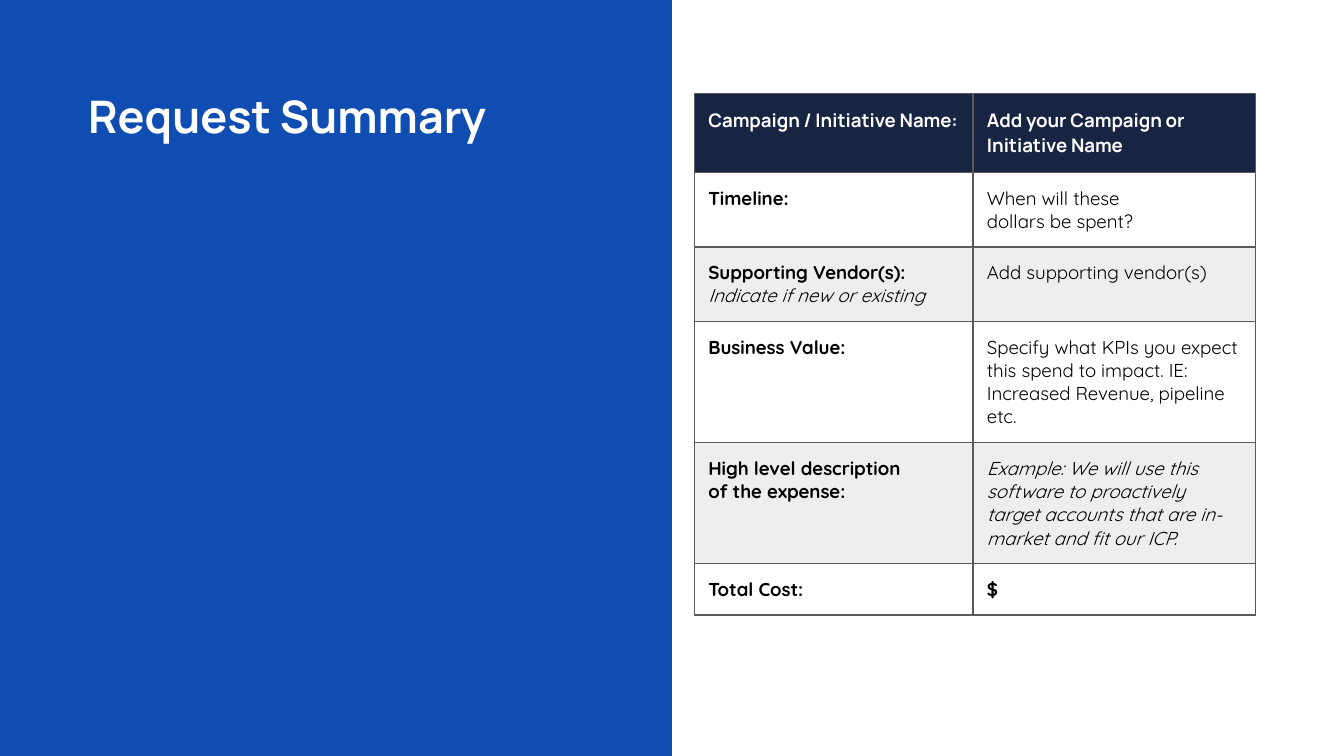
from copy import deepcopy
from dataclasses import dataclass

from lxml.etree import SubElement
from pptx import Presentation
from pptx.dml.color import RGBColor
from pptx.enum.shapes import MSO_SHAPE
from pptx.enum.text import MSO_ANCHOR, MSO_AUTO_SIZE, PP_ALIGN
from pptx.oxml.ns import qn
from pptx.util import Pt

PX = 9525  # 96 px to the inch
SLIDE_SIZE = (960, 540)
PANEL_BOX = (0, 0, 480, 540)
TITLE_BOX = (63, 63, 368, 48)
TABLE_LEFT, TABLE_TOP = 496, 67
COLUMN_WIDTHS = (199, 202)
ROW_HEIGHTS = (32, 32, 45, 45, 45, 32)
CELL_PADDING = 10


@dataclass(frozen=True)
class Theme:
    panel: str = "104DB3"
    header: str = "172543"
    band: str = "EEEEEE"
    paper: str = "FFFFFF"
    ink: str = "000000"
    rule: str = "595959"
    heading_font: str = "Manrope"
    body_font: str = "Quicksand"
    title_size: int = 24
    cell_size: int = 10
    rule_width: float = 0.75
    space_after: int = 16


THEME = Theme()
BOLD, PLAIN, ITALIC = (
    {"bold": bold, "italic": italic}
    for bold, italic in ((True, False), (False, False), (False, True))
)

# Each cell is a list of (text, emphasis) runs.
REQUEST_ROWS = [
    ([("Campaign / Initiative Name:", BOLD)],
     [("Add your Campaign or Initiative Name", BOLD)]),
    ([("Timeline:", BOLD)],
     [("When will these \ndollars be spent?", PLAIN)]),
    ([("Supporting Vendor(s):\n", BOLD), ("Indicate if new or existing", ITALIC)],
     [("Add supporting vendor(s)", PLAIN)]),
    ([("Business Value:", BOLD)],
     [("Specify what KPIs you expect this spend to impact. IE: "
       "Increased Revenue, pipeline etc.", PLAIN)]),
    ([("High level description \nof the expense:", BOLD)],
     [("Example: We will use this software to proactively target accounts "
       "that are in-market and fit our ICP.", ITALIC)]),
    ([("Total Cost:", BOLD)], [("$", BOLD)]),
]


def px(*lengths):
    return [length * PX for length in lengths]


def set_all(target, values):
    for name, value in values.items():
        setattr(target, name, value)


def paint(fill, color):
    fill.solid()
    fill.fore_color.rgb = RGBColor.from_string(color)


def style_font(font, face, size, color, emphasis):
    set_all(font, {"name": face, "size": Pt(size), **emphasis})
    font.color.rgb = RGBColor.from_string(color)


def add_panel(slide):
    panel = slide.shapes.add_shape(MSO_SHAPE.RECTANGLE, *px(*PANEL_BOX))
    panel.shadow.inherit = False
    paint(panel.fill, THEME.panel)
    panel.line.fill.background()
    # The panel goes behind the title placeholder.
    slide.shapes.title._element.addprevious(panel._element)


def format_title(slide, words):
    title = slide.shapes.title
    set_all(title, dict(zip(("left", "top", "width", "height"), px(*TITLE_BOX))))
    frame = title.text_frame
    set_all(frame, {
        "margin_left": 0, "margin_top": 0, "margin_right": 0, "margin_bottom": 0,
        "word_wrap": True, "vertical_anchor": MSO_ANCHOR.TOP,
        "auto_size": MSO_AUTO_SIZE.NONE,
    })
    frame.text = words
    heading = frame.paragraphs[0]
    heading.alignment = PP_ALIGN.LEFT
    style_font(heading.runs[0].font, THEME.heading_font, THEME.title_size,
               THEME.paper, BOLD)


def add_borders(cell):
    properties = cell._tc.get_or_add_tcPr()
    for side in ("lnL", "lnR", "lnT", "lnB"):
        border = SubElement(properties, qn(f"a:{side}"), w=str(Pt(THEME.rule_width)))
        fill = SubElement(border, qn("a:solidFill"))
        SubElement(fill, qn("a:srgbClr"), val=THEME.rule)


def write_runs(paragraph, runs, face, color):
    """Write the runs; line breaks take the format of the run before them."""
    for words, emphasis in runs:
        for index, line in enumerate(words.split("\n")):
            if index:
                paragraph.add_line_break()
                line_break = paragraph._p.findall(qn("a:br"))[-1]
                line_break.append(deepcopy(run.font._element))
            if line:
                run = paragraph.add_run()
                run.text = line
                style_font(run.font, face, THEME.cell_size, color, emphasis)


def fill_cell(cell, runs, face, color, background):
    padding = CELL_PADDING * PX
    set_all(cell, {f"margin_{side}": padding
                   for side in ("left", "top", "right", "bottom")})
    add_borders(cell)
    paint(cell.fill, background)
    paragraph = cell.text_frame.paragraphs[0]
    paragraph.space_after = Pt(THEME.space_after)
    write_runs(paragraph, runs, face, color)


def row_style(index):
    """Return font, text colour and background of a table row."""
    if index == 0:
        return THEME.heading_font, THEME.paper, THEME.header
    banded = index in (2, 4)
    return THEME.body_font, THEME.ink, THEME.band if banded else THEME.paper


def add_request_table(slide):
    table = slide.shapes.add_table(
        len(REQUEST_ROWS), len(COLUMN_WIDTHS),
        *px(TABLE_LEFT, TABLE_TOP, sum(COLUMN_WIDTHS), sum(ROW_HEIGHTS))).table
    set_all(table, {"first_row": False, "horz_banding": False})
    for column, width in zip(table.columns, px(*COLUMN_WIDTHS)):
        column.width = width
    for row, height in zip(table.rows, px(*ROW_HEIGHTS)):
        row.height = height
    for index, (row, contents) in enumerate(zip(table.rows, REQUEST_ROWS)):
        for cell, runs in zip(row.cells, contents):
            fill_cell(cell, runs, *row_style(index))


def main():
    deck = Presentation()
    deck.slide_width, deck.slide_height = px(*SLIDE_SIZE)
    slide = deck.slides.add_slide(deck.slide_layouts[5])
    paint(slide.background.fill, THEME.paper)
    add_panel(slide)
    format_title(slide, "Request Summary")
    add_request_table(slide)
    deck.save("out.pptx")


if __name__ == "__main__":
    main()
